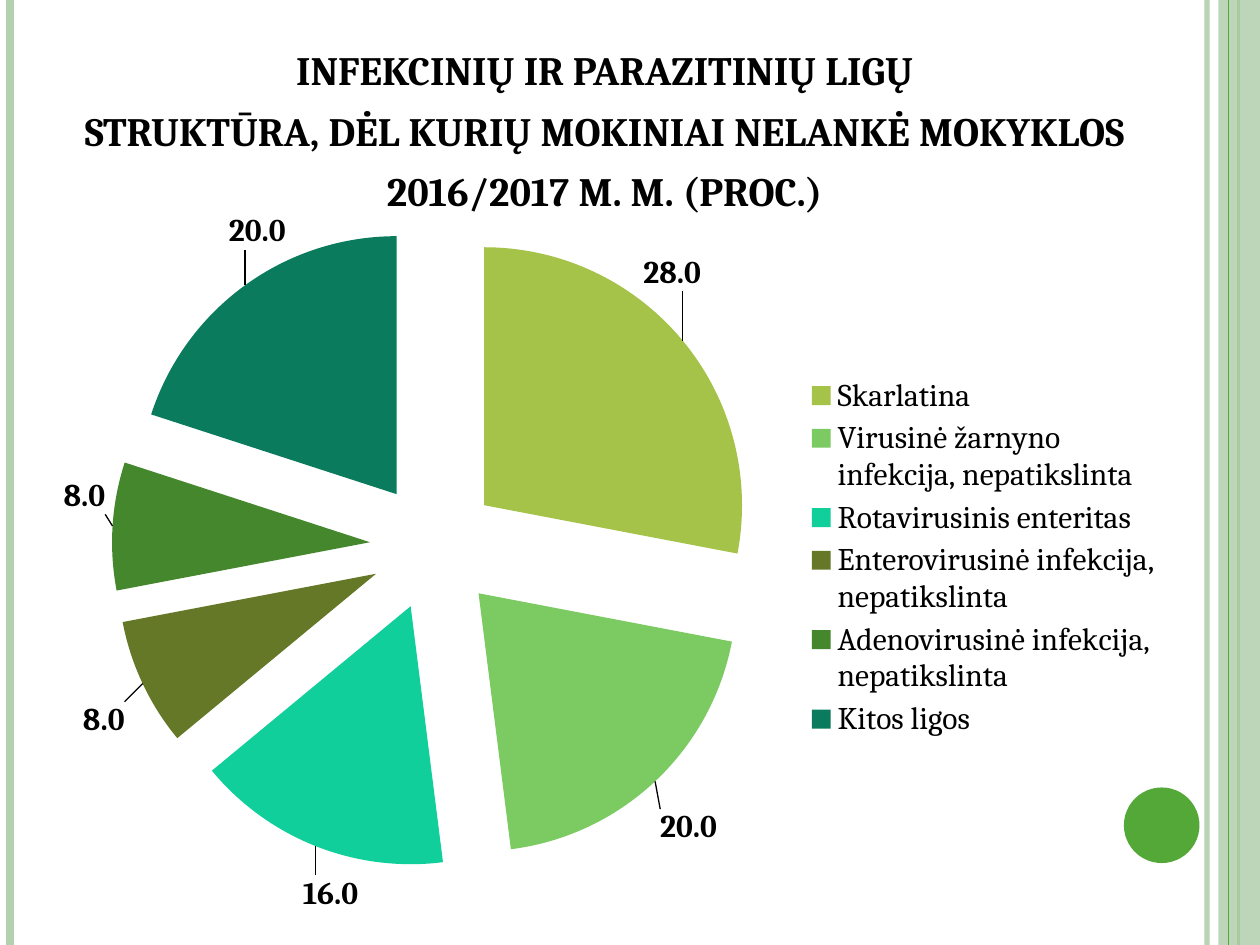
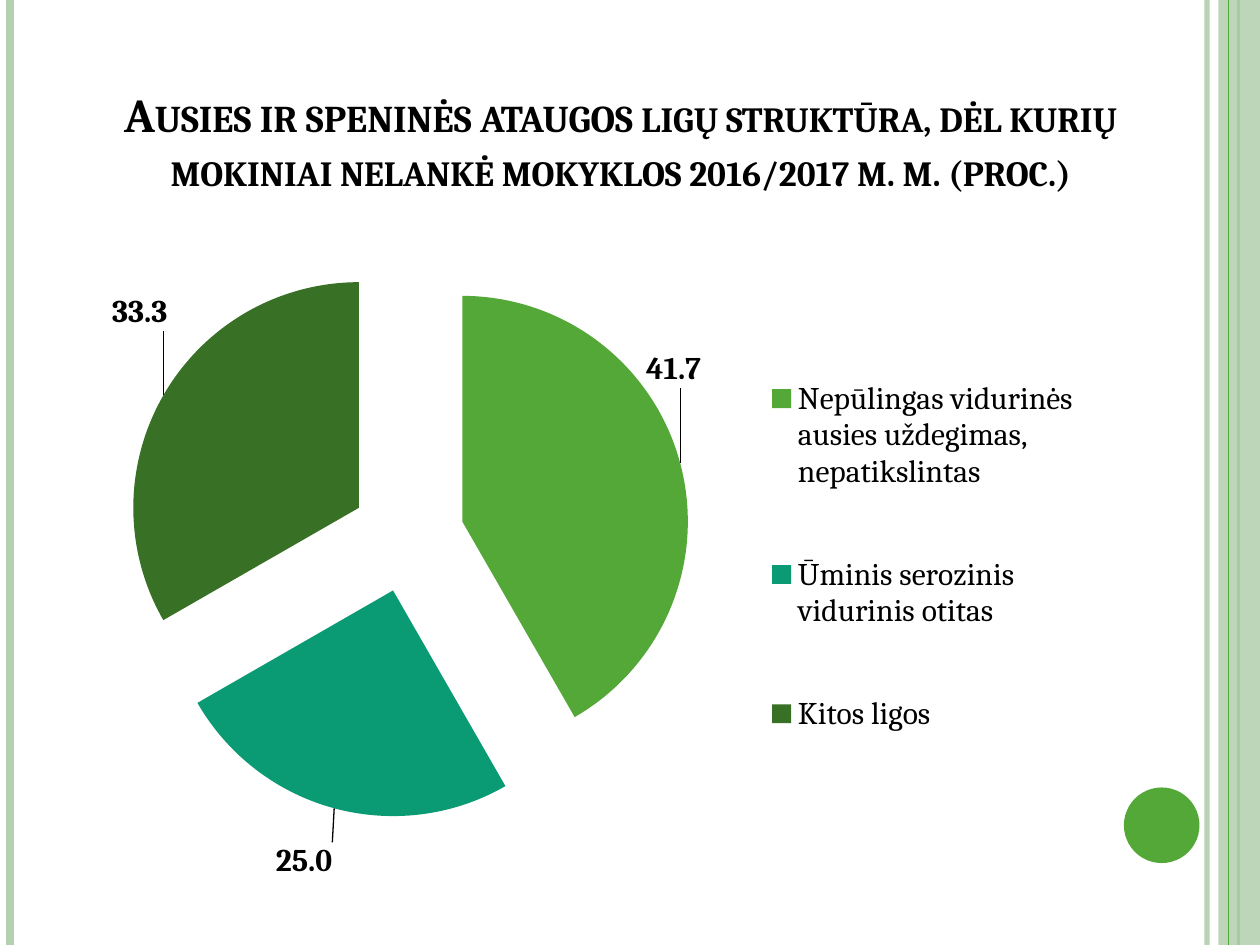
"""Build two slides of exploded pie charts on the causes of school absence."""
from dataclasses import dataclass
from typing import NamedTuple

from lxml.etree import SubElement
from pptx import Presentation
from pptx.chart.data import CategoryChartData
from pptx.dml.color import RGBColor
from pptx.enum.chart import XL_CHART_TYPE, XL_LABEL_POSITION, XL_LEGEND_POSITION
from pptx.enum.shapes import MSO_CONNECTOR, MSO_SHAPE
from pptx.enum.text import MSO_ANCHOR, PP_ALIGN
from pptx.oxml import parse_xml
from pptx.oxml.ns import nsdecls, qn
from pptx.util import Pt

PX = 9144
WIDE, HIGH = 1000, 750
FONT = "Cambria"
FORMAT = "#,##0.0"
BLACK = RGBColor(0x00, 0x00, 0x00)
WHITE = RGBColor(0xFF, 0xFF, 0xFF)
PALE = RGBColor(0xB4, 0xD1, 0xAF)
GREEN = RGBColor(0x54, 0xA8, 0x38)
LIME = RGBColor(0xA5, 0xC2, 0x49)
LEAF = RGBColor(0x7C, 0xCA, 0x62)
MINT = RGBColor(0x10, 0xCF, 0x9B)
OLIVE = RGBColor(0x65, 0x78, 0x28)
MOSS = RGBColor(0x44, 0x87, 0x2D)
PINE = RGBColor(0x0A, 0x7C, 0x5D)
TEAL = RGBColor(0x0B, 0x9B, 0x74)
FOREST = RGBColor(0x38, 0x70, 0x25)


class Box(NamedTuple):
    left: float
    top: float
    width: float
    height: float

    def emu(self) -> list[int]:
        return [round(side * PX) for side in self]


class Rule(NamedTuple):
    left: int
    color: RGBColor
    weight: float
    alpha: int = 100


class Part(NamedTuple):
    text: str
    size: float
    ends: bool = False


class Slice(NamedTuple):
    name: str
    value: float
    color: RGBColor
    shift: tuple[float, float]


@dataclass
class Page:
    head: Box
    foot: int
    title: list[Part]
    frame: Box
    plot: Box
    legend: Box
    slices: list[Slice]


BACK = [Rule(958, PALE, 3, 93), Rule(8, PALE, 4.5), Rule(983, GREEN, 1.5)]
FRONT = Rule(975, GREEN, 0.75)
BAND = Box(967, 0, 33, HIGH)
DOT = Box(892, 625, 60, 60)

PAGES = [
    Page(
        Box(43, 21, 874, 156), 5,
        [Part("infekcinių ir parazitinių ligų", 28.8, True),
         Part("struktūra, dėl kurių mokiniai nelankė mokyklos "
              "2016/2017 m. m. (proc.)", 28.8)],
        Box(35, 147, 898, 591),
        Box(0.06, 0.05, 0.57, 0.87),
        Box(0.67, 0.25, 0.32, 0.5),
        [Slice("Skarlatina", 28, LIME, (-0.04, -0.06)),
         Slice("Virusinė žarnyno infekcija, nepatikslinta", 20, LEAF, (0, 0.03)),
         Slice("Rotavirusinis enteritas", 16, MINT, (0.04, 0.03)),
         Slice("Enterovirusinė infekcija, nepatikslinta", 8, OLIVE, (-0.01, 0.02)),
         Slice("Adenovirusinė infekcija, nepatikslinta", 8, MOSS, (0, -0.04)),
         Slice("Kitos ligos", 20, PINE, (0.04, -0.04))],
    ),
    Page(
        Box(43, 21, 899, 182), 48,
        [Part("Ausies ir speninės ataugos ", 27),
         Part("ligų struktūra, dėl kurių mokiniai nelankė mokyklos "
              "2016/2017 m. m. (proc.)", 25.2)],
        Box(50, 175, 817, 533),
        Box(0.06, 0.05, 0.55, 0.84),
        Box(0.68, 0.14, 0.31, 0.72),
        [Slice("Nepūlingas vidurinės ausies uždegimas, nepatikslintas", 41.7,
               GREEN, (-0.04, -0.11)),
         Slice("Ūminis serozinis vidurinis otitas", 25, TEAL, (0, 0.04)),
         Slice("Kitos ligos", 33.3, FOREST, (0.01, -0.09))],
    ),
]


def fade(item, alpha: int) -> None:
    if alpha < 100:
        color = next(item.iter(qn("a:srgbClr")))
        SubElement(color, qn("a:alpha")).set("val", str(alpha * 1000))


def draw_rule(slide, rule: Rule) -> None:
    left = rule.left * PX
    line = slide.shapes.add_connector(MSO_CONNECTOR.STRAIGHT, left, 0, left, HIGH * PX)
    line.line.color.rgb = rule.color
    line.line.width = Pt(rule.weight)
    props = line._element.spPr
    fade(props, rule.alpha)
    SubElement(props, qn("a:effectLst"))


def draw_shape(slide, kind: MSO_SHAPE, box: Box, color: RGBColor, alpha: int = 100) -> None:
    shape = slide.shapes.add_shape(kind, *box.emu())
    shape.shadow.inherit = False
    shape.fill.solid()
    shape.fill.fore_color.rgb = color
    shape.line.fill.background()
    fade(shape._element.spPr, alpha)


def draw_frame(slide) -> None:
    slide.background.fill.solid()
    slide.background.fill.fore_color.rgb = WHITE
    for rule in BACK:
        draw_rule(slide, rule)
    draw_shape(slide, MSO_SHAPE.RECTANGLE, BAND, PALE, 87)
    draw_rule(slide, FRONT)
    draw_shape(slide, MSO_SHAPE.OVAL, DOT, GREEN)


def set_font(font, size: float, bold: bool = False) -> None:
    font.name = FONT
    font.size = Pt(size)
    font.bold = bold
    font.color.rgb = BLACK


def draw_title(slide, page: Page) -> None:
    frame = slide.shapes.add_textbox(*page.head.emu()).text_frame
    frame.word_wrap = True
    frame.vertical_anchor = MSO_ANCHOR.BOTTOM
    frame.margin_bottom = page.foot * PX
    para = frame.paragraphs[0]
    para.alignment = PP_ALIGN.CENTER
    for part in page.title:
        run = para.add_run()
        run.text = part.text
        set_font(run.font, part.size, True)
        run.font._element.set("cap", "small")
        if part.ends:
            para.add_line_break()


def make_layout(left: float, top: float, *size: float, inner: bool = False):
    layout = parse_xml(f"<c:layout {nsdecls('c')}><c:manualLayout/></c:layout>")
    fields = [("layoutTarget", "inner")] if inner else []
    if size:
        fields += [("xMode", "edge"), ("yMode", "edge")]
    fields += zip("xywh", (left, top, *size))
    for name, value in fields:
        SubElement(layout[0], qn(f"c:{name}")).set("val", str(value))
    return layout


def clear_layout(item) -> None:
    for old in item.findall(qn("c:layout")):
        item.remove(old)


def style_slices(series, slices: list[Slice]) -> None:
    labels = series.data_labels
    labels.show_value = True
    labels.number_format = FORMAT
    labels.number_format_is_linked = False
    set_font(labels.font, 18, True)
    root = series._element
    for index, piece in enumerate(slices):
        point = series.points[index]
        point.format.fill.solid()
        point.format.fill.fore_color.rgb = piece.color
        point.data_label.position = XL_LABEL_POSITION.OUTSIDE_END
        set_font(point.data_label.font, 18, True)
    for label, piece in zip(root.iter(qn("c:dLbl")), slices):
        layout = make_layout(*piece.shift)
        label.find(qn("c:idx")).addnext(layout)
        layout.addnext(parse_xml(
            f'<c:numFmt {nsdecls("c")} formatCode="{FORMAT}" sourceLinked="0"/>'))
    root.find(qn("c:dPt")).addprevious(
        parse_xml(f'<c:explosion {nsdecls("c")} val="25"/>'))
    group = root.find(qn("c:dLbls"))
    leader = group.find(qn("c:showLeaderLines"))
    if leader is None:
        leader = SubElement(group, qn("c:showLeaderLines"))
    leader.set("val", "1")
    leader.addnext(parse_xml(
        f'<c:leaderLines {nsdecls("c", "a")}><c:spPr><a:ln w="9525"><a:solidFill>'
        f'<a:srgbClr val="{BLACK}"/></a:solidFill></a:ln></c:spPr></c:leaderLines>'))


def draw_pie(slide, page: Page) -> None:
    data = CategoryChartData()
    data.categories = [piece.name for piece in page.slices]
    data.add_series("Series 1", [piece.value for piece in page.slices])
    chart = slide.shapes.add_chart(XL_CHART_TYPE.PIE, *page.frame.emu(), data).chart
    set_font(chart.font, 18)
    chart.has_title = False
    chart.has_legend = True
    chart.legend.position = XL_LEGEND_POSITION.RIGHT
    chart.legend.include_in_layout = False
    set_font(chart.legend.font, 18)
    chart.plots[0].vary_by_categories = True
    style_slices(chart.plots[0].series[0], page.slices)
    area = chart._chartSpace.chart.plotArea
    clear_layout(area)
    area.insert(0, make_layout(*page.plot, inner=True))
    legend = chart.legend._element
    clear_layout(legend)
    legend.find(qn("c:legendPos")).addnext(make_layout(*page.legend))


def main() -> None:
    deck = Presentation()
    deck.slide_width, deck.slide_height = WIDE * PX, HIGH * PX
    for page in PAGES:
        slide = deck.slides.add_slide(deck.slide_layouts[6])
        draw_frame(slide)
        draw_title(slide, page)
        draw_pie(slide, page)
    deck.save("out.pptx")


if __name__ == "__main__":
    main()
